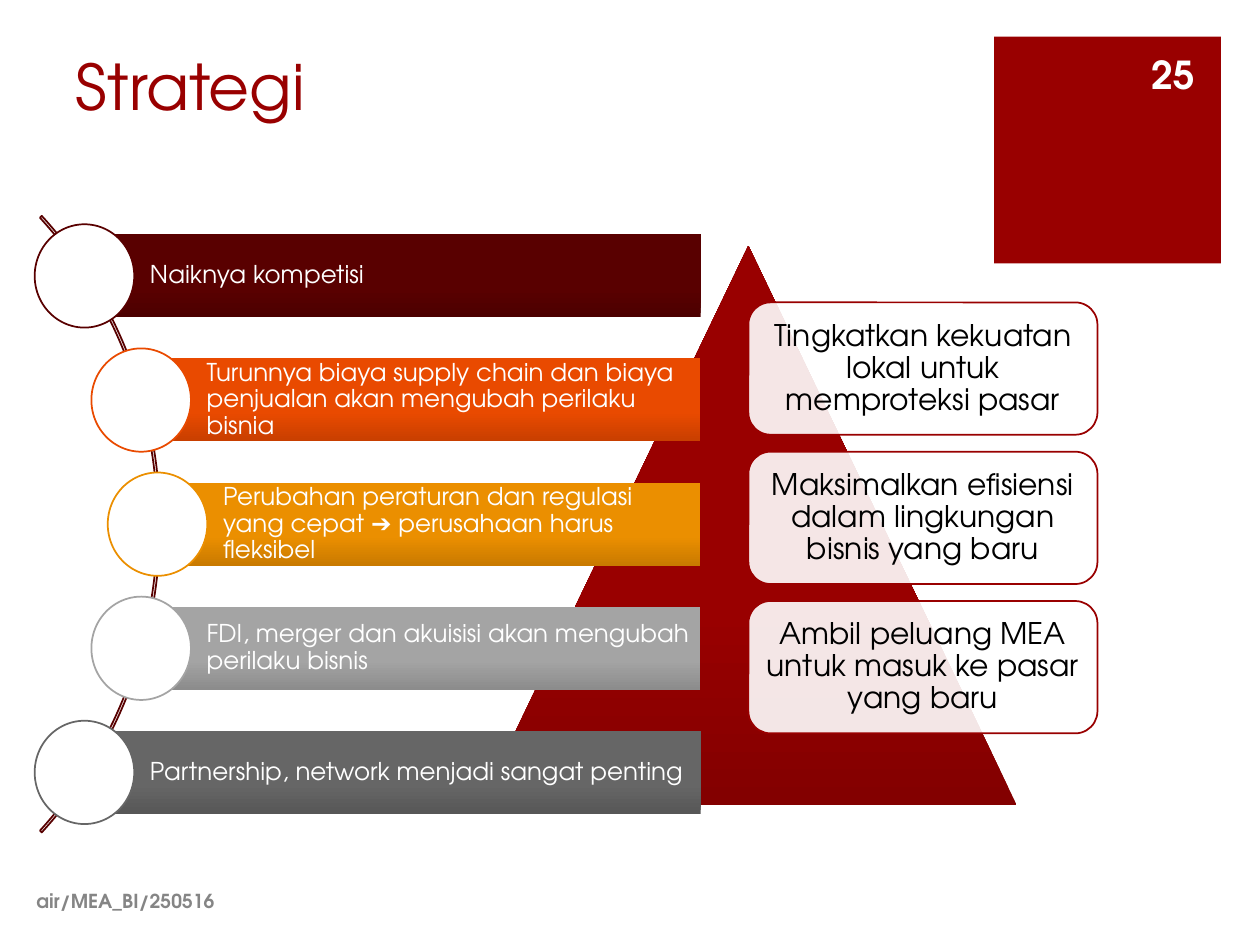
import pptx
import pptx.util
import pptx.dml.color
import pptx.enum.shapes
import pptx.enum.text

Inches, Pt = pptx.util.Inches, pptx.util.Pt
SHAPE = pptx.enum.shapes.MSO_SHAPE
ALIGN = pptx.enum.text.PP_ALIGN
ANCHOR = pptx.enum.text.MSO_ANCHOR

TITLE = "Strategi"
FOOTER = "air/MEA_BI/250516"
PAGE = "25"
# text, left edge of the bar, colour, darker colour at the bottom
TRENDS = [
    ("Naiknya kompetisi", 0.67, "590000", "4C0000"),
    ("Turunnya biaya supply chain dan biaya penjualan akan mengubah perilaku bisnia",
     1.12, "E94A00", "C83F00"),
    ("Perubahan peraturan dan regulasi yang cepat ➔ perusahaan harus fleksibel",
     1.25, "EB8F00", "C97A00"),
    ("FDI, merger dan akuisisi akan mengubah perilaku bisnis", 1.12, "A4A4A4", "8C8C8C"),
    ("Partnership, network menjadi sangat penting", 0.67, "666666", "575757"),
]
STRATEGIES = [
    "Tingkatkan kekuatan lokal untuk memproteksi pasar",
    "Maksimalkan efisiensi dalam lingkungan bisnis yang baru",
    "Ambil peluang MEA untuk masuk ke pasar yang baru",
]
THEME = {
    "font": "TeX Gyre Adventor",
    "red": "990000", "red_dark": "830000", "arc": "580101",
    "white": "FFFFFF", "black": "000000", "grey": "858585",
    "title": 36, "page": 22, "strategy": 17, "trend": 14, "footer": 11,
}

BAR_TOP, BAR_PITCH, BAR_HEIGHT, BAR_RIGHT = 1.86, 0.985, 0.66, 5.56
CIRCLE_W, CIRCLE_H = 0.79, 0.82
CARD_TOP, CARD_PITCH = 2.4, 1.185


def rgb(value):
    return pptx.dml.color.RGBColor.from_string(value)


def add_shape(slide, kind, box, fill=None, line=None):
    sp = slide.shapes.add_shape(kind, *map(Inches, box))
    sp.shadow.inherit = False
    if fill:
        sp.fill.solid()
        sp.fill.fore_color.rgb = rgb(fill)
    else:
        sp.fill.background()
    if line:
        sp.line.color.rgb = rgb(line)
        sp.line.width = Pt(1)
    else:
        sp.line.fill.background()
    return sp


def shade(sp, color, dark):
    """Fill with one colour that darkens over the lowest third."""
    sp.fill.gradient()
    sp.fill.gradient_angle = 90
    for stop, position, value in zip(sp.fill.gradient_stops, (0, 0.35), (dark, color)):
        stop.position = position
        stop.color.rgb = rgb(value)


def set_alpha(sp, percent):
    color = sp.fill._xPr.find(".//" + pptx.oxml.ns.qn("a:srgbClr"))
    alpha = pptx.oxml.parse_xml(
        f'<a:alpha {pptx.oxml.ns.nsdecls("a")} val="{percent * 1000}"/>')
    color.append(alpha)


def write(sp, text, size, color, bold=False, align=ALIGN.LEFT, anchor=ANCHOR.MIDDLE,
          insets=(0.1, 0.05, 0.1, 0.05), spacing=None):
    """Put one run in a shape; insets run left, top, right, bottom."""
    tf = sp.text_frame
    tf.word_wrap = True
    tf.vertical_anchor = anchor
    tf.margin_left, tf.margin_top, tf.margin_right, tf.margin_bottom = map(Inches, insets)
    p = tf.paragraphs[0]
    p.alignment = align
    p.line_spacing = spacing
    r = p.add_run()
    r.text = text
    r.font.name = THEME["font"]
    r.font.size = Pt(THEME[size])
    r.font.bold = bold
    r.font.color.rgb = rgb(THEME[color])


def add_text(slide, box, *args, **kwargs):
    write(slide.shapes.add_textbox(*map(Inches, box)), *args, **kwargs)


def add_header_and_footer(slide):
    add_shape(slide, SHAPE.RECTANGLE, (7.89, 0.29, 1.8, 1.8), THEME["red"])
    add_text(slide, (0.5, 0.39, 7.12, 0.64), TITLE, "title", "red", anchor=ANCHOR.BOTTOM)
    add_text(slide, (0.19, 6.95, 6.57, 0.4), FOOTER, "footer", "grey", bold=True)
    add_text(slide, (9.03, 0.39, 0.55, 0.4), PAGE, "page", "white", bold=True,
             align=ALIGN.RIGHT)


def add_strategies(slide):
    pyramid = add_shape(slide, SHAPE.ISOSCELES_TRIANGLE, (3.81, 1.95, 4.26, 4.44))
    shade(pyramid, THEME["red"], THEME["red_dark"])
    for i, text in enumerate(STRATEGIES):
        card = add_shape(slide, SHAPE.ROUNDED_RECTANGLE,
                         (5.94, CARD_TOP + i * CARD_PITCH, 2.77, 1.05),
                         THEME["white"], THEME["red"])
        set_alpha(card, 90)
        write(card, text, "strategy", "black", align=ALIGN.CENTER,
              insets=(0.07,) * 4, spacing=0.9)


def add_trends(slide):
    arc = add_shape(slide, SHAPE.BLOCK_ARC, (-5.5, 0.62, 6.77, 7.08), line=THEME["arc"])
    for i, value in enumerate((189, 27, 0.003)):
        arc.adjustments[i] = value
    for i, (text, left, color, dark) in enumerate(TRENDS):
        top = BAR_TOP + i * BAR_PITCH
        bar = add_shape(slide, SHAPE.RECTANGLE, (left, top, BAR_RIGHT - left, BAR_HEIGHT))
        shade(bar, color, dark)
        write(bar, text, "trend", "white", insets=(0.52, 0.04, 0.04, 0.04), spacing=0.9)
        add_shape(slide, SHAPE.OVAL,
                  (left - CIRCLE_W / 2, top + (BAR_HEIGHT - CIRCLE_H) / 2, CIRCLE_W, CIRCLE_H),
                  THEME["white"], color)


def main():
    prs = pptx.Presentation()
    prs.slide_width, prs.slide_height = Inches(10), Inches(7.5)
    slide = prs.slides.add_slide(prs.slide_layouts[6])
    add_header_and_footer(slide)
    add_strategies(slide)
    add_trends(slide)
    prs.save("out.pptx")


if __name__ == "__main__":
    main()
